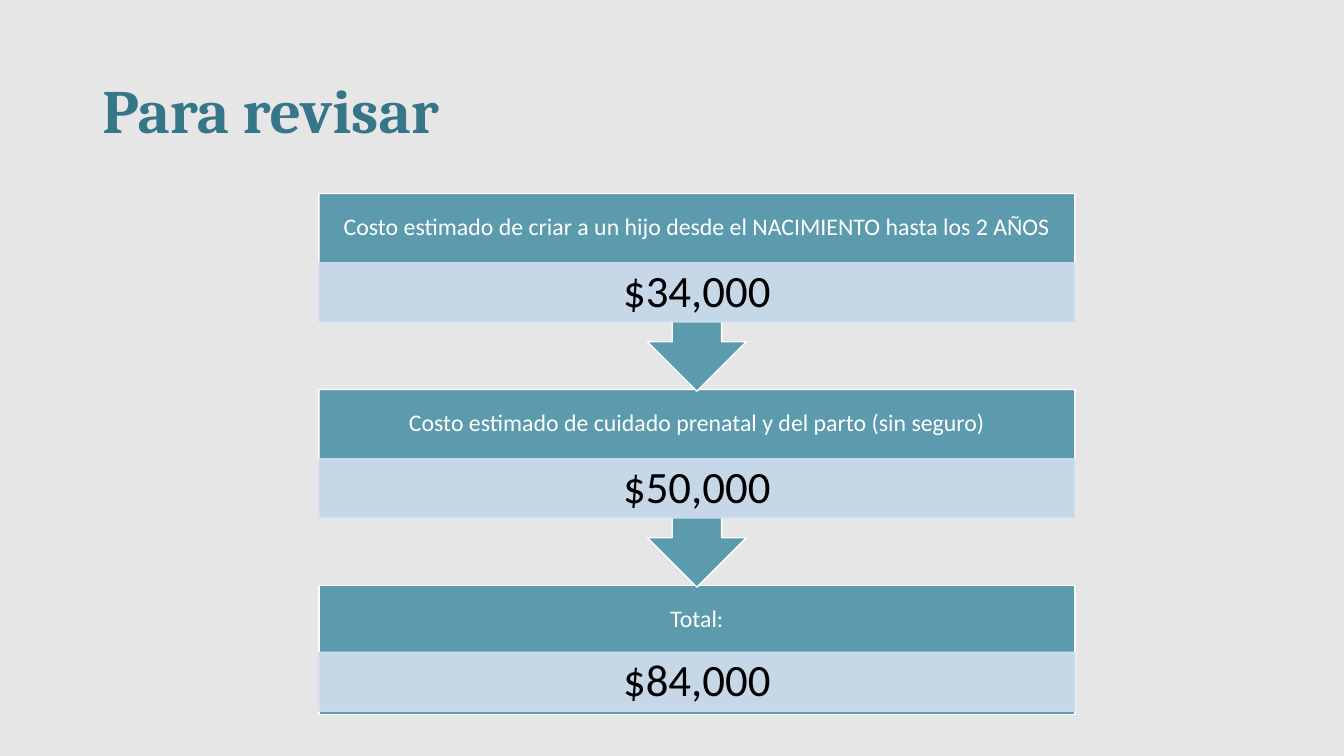
"""Builds the cost review slide."""
from dataclasses import dataclass

from lxml import etree
from pptx import Presentation
from pptx.dml.color import RGBColor
from pptx.enum import shapes, text
from pptx.oxml.ns import qn
from pptx.util import Pt


@dataclass(frozen=True)
class Theme:
    """Colours, fonts and type sizes."""
    back: str = "E7E6E6"
    heading: str = "367689"
    teal: str = "5B9BAD"
    band: str = "D2DEEF"
    white: str = "FFFFFF"
    black: str = "000000"
    title_font: str = "Cambria"
    body_font: str = "Calibri"
    title_size: int = 44
    label_size: int = 17
    amount_size: int = 32


THEME = Theme()
STEPS = [
    ("Costo estimado de criar a un hijo desde el NACIMIENTO hasta los 2 AÑOS", "$34,000"),
    ("Costo estimado de cuidado prenatal y del parto (sin seguro)", "$50,000"),
    ("Total:", "$84,000"),
]


def write(sp, words, size, color, font=THEME.body_font, bold=False,
          align=text.PP_ALIGN.CENTER, inset=(7.2, 3.6)):
    """Put one formatted paragraph, centred vertically, into a shape."""
    tf = sp.text_frame
    tf.word_wrap = True
    tf.auto_size = text.MSO_AUTO_SIZE.NONE
    tf.vertical_anchor = text.MSO_ANCHOR.MIDDLE
    tf.margin_left = tf.margin_right = Pt(inset[0])
    tf.margin_top = tf.margin_bottom = Pt(inset[1])
    p = tf.paragraphs[0]
    p.alignment, p.line_spacing = align, 0.9
    r = p.add_run()
    r.text = words
    r.font.name, r.font.size, r.font.bold = font, Pt(size), bold
    r.font.color.rgb = RGBColor.from_string(color)


def add_block(parent, kind, box, fill, line, opacity=None):
    """Add a filled, outlined shape, optionally translucent."""
    sp = parent.shapes.add_shape(kind, *map(Pt, box))
    sp.shadow.inherit = False
    sp.fill.solid()
    sp.fill.fore_color.rgb = RGBColor.from_string(fill)
    sp.line.color.rgb = RGBColor.from_string(line)
    sp.line.width = Pt(1)
    if opacity:
        for clr in sp._element.spPr.iter(qn("a:srgbClr")):
            etree.SubElement(clr, qn("a:alpha"), val=str(opacity * 1000))
    return sp


def add_title(s, box, words):
    """Place and format the slide title."""
    sp = s.shapes.title
    sp.left, sp.top, sp.width, sp.height = map(Pt, box)
    write(sp, words, THEME.title_size, THEME.heading, THEME.title_font, True,
          text.PP_ALIGN.LEFT)


def add_step(parent, box, label, amount, last):
    """Draw one step: a header with its amount, and an arrow unless last."""
    x, y, w, h = box
    kind = shapes.MSO_SHAPE.RECTANGLE if last else shapes.MSO_SHAPE.UP_ARROW_CALLOUT
    sp = add_block(parent, kind, box, THEME.teal, THEME.white)
    sp.rotation = 0 if last else 180
    header = parent.shapes.add_textbox(*map(Pt, (x, y, w, 49.6)))
    write(header, label, THEME.label_size, THEME.white, inset=(9.4, 9.4))
    band_top = y + (47.7 if last else 49.6)
    band = add_block(parent, shapes.MSO_SHAPE.RECTANGLE, (x, band_top, w, 42.3),
                     THEME.band, THEME.band, 90)
    write(band, amount, THEME.amount_size, THEME.black, inset=(18, 2.9))


def add_flow(s, box, steps):
    """Stack the steps at an equal pitch, the lowest at the back."""
    x, y, w, h = box
    last_h, overlap = 92, 1.2
    pitch = (h - last_h) / (len(steps) - 1)
    group = s.shapes.add_group_shape()
    for i, (label, amount) in reversed(list(enumerate(steps))):
        last = i == len(steps) - 1
        step_h = last_h if last else pitch + overlap
        add_step(group, (x, y + i * pitch, w, step_h), label, amount, last)


def main():
    """Build and save the slide."""
    prs = Presentation()
    prs.slide_width, prs.slide_height = Pt(960), Pt(540)
    s = prs.slides.add_slide(prs.slide_layouts[5])
    s.background.fill.solid()
    s.background.fill.fore_color.rgb = RGBColor.from_string(THEME.back)
    add_title(s, (66, 28.8, 828, 104.4), "Para revisar")
    add_flow(s, (227.8, 138.2, 540, 372), STEPS)
    prs.save("out.pptx")


if __name__ == "__main__":
    main()
